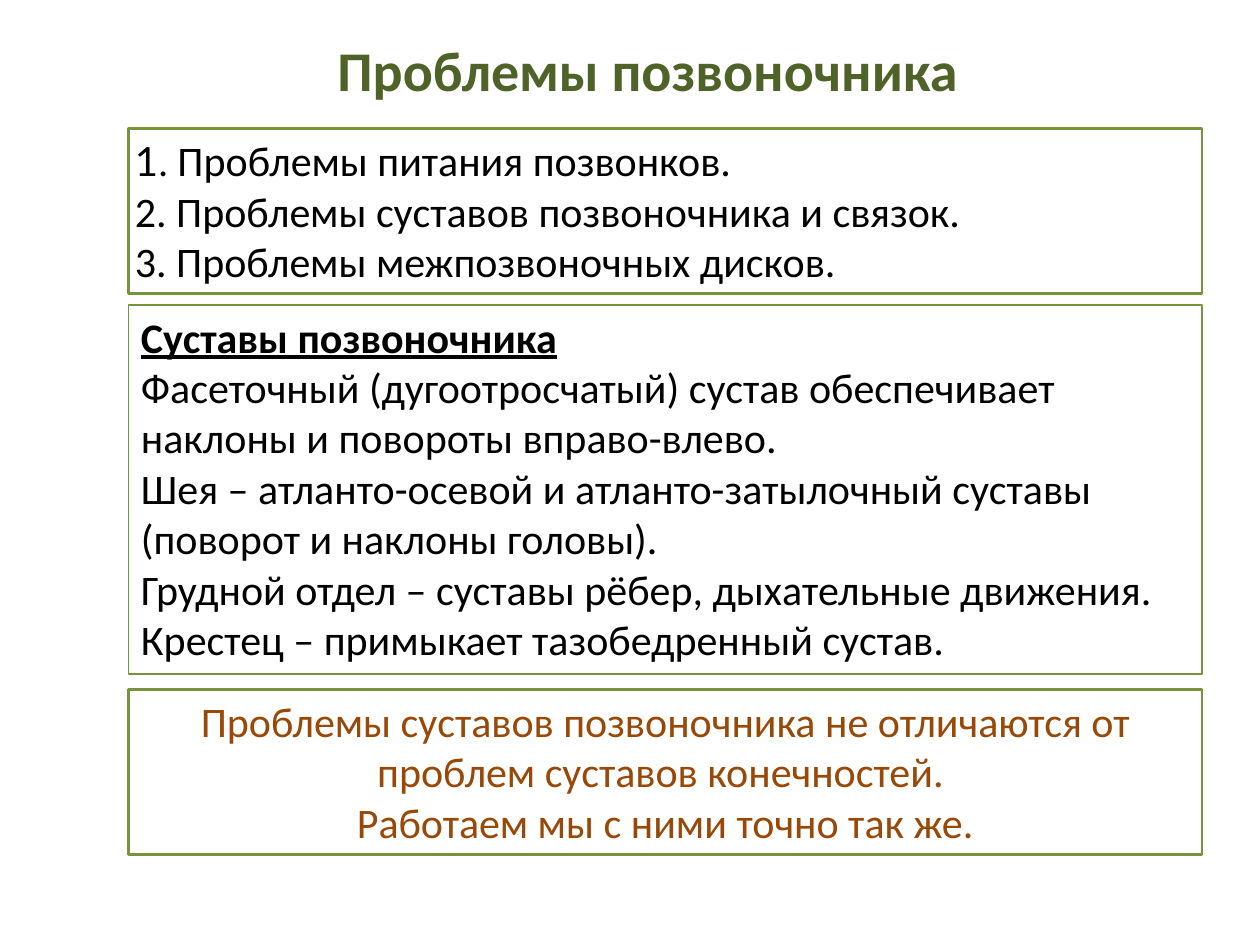
from pptx import Presentation, util as u
from pptx.dml.color import RGBColor
from pptx.enum import shapes, text

COLORS = {"green": "77933C", "title": "4F6228", "brown": "984807", "black": "000000"}


class Page:
    def __init__(self, deck):
        self.slide = deck.slides.add_slide(deck.slide_layouts[6])
        self.base = {"name": "Calibri", "size": u.Pt(24), "bold": False}

    def style(self, font, color, form):
        for key, val in {**self.base, **form}.items():
            setattr(font, key, val)
        font.color.rgb = RGBColor.from_string(COLORS[color])

    def words(self, frame, paras, color="black", align=text.PP_ALIGN.LEFT):
        """Each paragraph is a list of (string, format) runs; newline breaks a line."""
        for i, runs in enumerate(paras):
            para = frame.add_paragraph() if i else frame.paragraphs[0]
            para.alignment = align
            for string, form in runs:
                for n, line in enumerate(string.split("\n")):
                    if n:
                        para.add_line_break()
                    run = para.add_run()
                    run.text = line
                    self.style(run.font, color, form)

    def title(self, string, left, top, wide, high):
        box = self.slide.shapes.add_textbox(*map(u.Inches, (left, top, wide, high)))
        box.text_frame.word_wrap = False
        self.words(box.text_frame, [[(string, {"size": u.Pt(32), "bold": True})]], "title")

    def panel(self, top, high, paras, line=1.5, side=0.1, **look):
        box = self.slide.shapes.add_shape(
            shapes.MSO_SHAPE.RECTANGLE, *map(u.Inches, (1.02, top, 8.52, high)))
        box.shadow.inherit = False
        box.fill.background()
        box.line.color.rgb = RGBColor.from_string(COLORS["green"])
        box.line.width = u.Pt(line)
        frame = box.text_frame
        form = {"word_wrap": True, "vertical_anchor": text.MSO_ANCHOR.TOP,
                "margin_left": u.Inches(side), "margin_right": u.Inches(side)}
        for key, val in form.items():
            setattr(frame, key, val)
        self.words(frame, paras, **look)


def main():
    deck = Presentation()
    deck.slide_width, deck.slide_height = u.Inches(10), u.Inches(7.5)
    page = Page(deck)

    # Numbered problems
    small = {"size": u.Pt(23)}
    page.panel(1.02, 1.31, [
        [("1", {**small, "name": "Lato"}), (". ", small),
         ("Проблемы питания позвонков.", {})],
        [("2. Проблемы суставов позвоночника и связок.", {})],
        [("3. Проблемы межпозвоночных дисков.", {})],
    ], side=0.05)

    # Conclusion
    page.panel(5.47, 1.31, [
        [("Проблемы суставов позвоночника не отличаются от проблем суставов конечностей. ", {})],
        [("Работаем мы с ними точно так же.", {})],
    ], color="brown", align=text.PP_ALIGN.CENTER)

    # Title
    page.title("Проблемы позвоночника", 2.58, 0.23, 5.18, 0.64)

    # Joints of the spine
    page.panel(2.42, 2.93, [
        [("Суставы позвоночника", {"bold": True, "underline": True})],
        [("Фасеточный (дугоотросчатый) сустав обеспечивает наклоны и повороты вправо-влево.\n"
          "Шея – атланто-осевой и атланто-затылочный суставы (поворот и наклоны головы).\n"
          "Грудной отдел – суставы рёбер, дыхательные движения.", {})],
        [("Крестец – примыкает тазобедренный сустав.", {})],
    ], line=0.75)

    deck.save("out.pptx")


if __name__ == "__main__":
    main()
